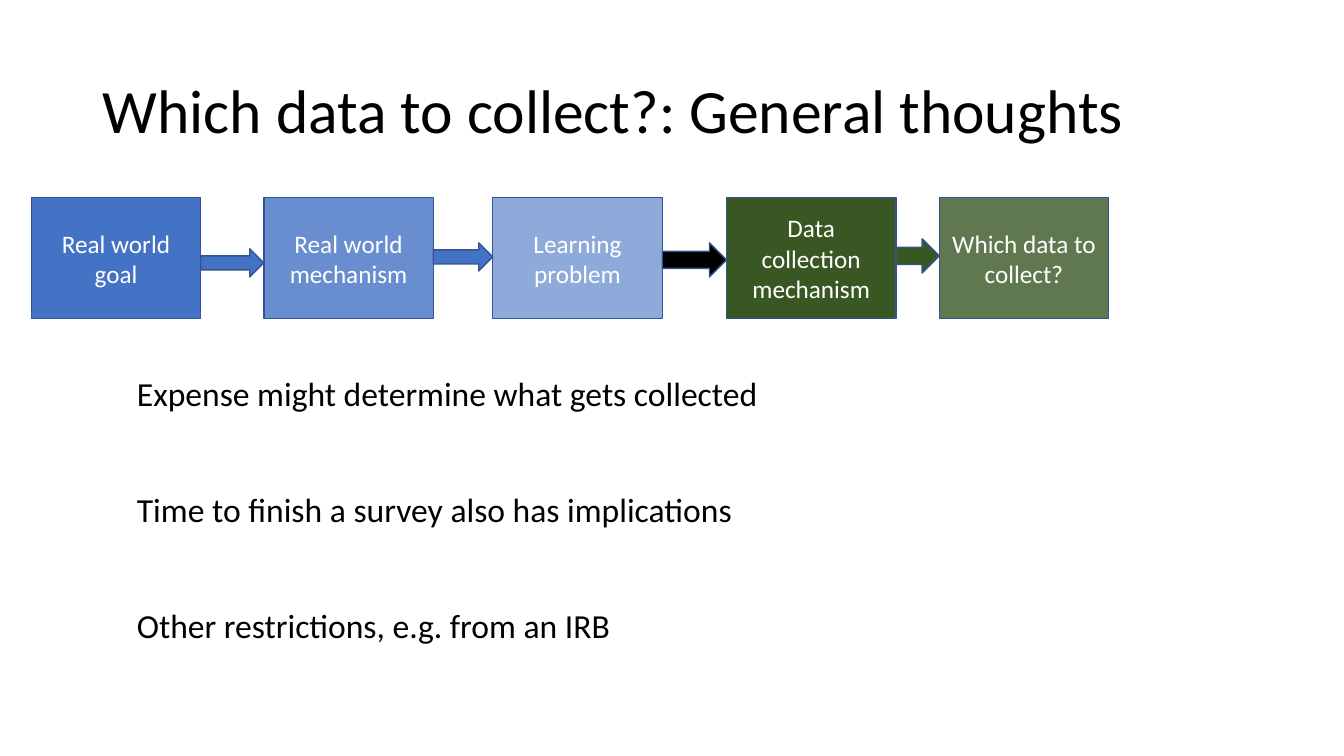
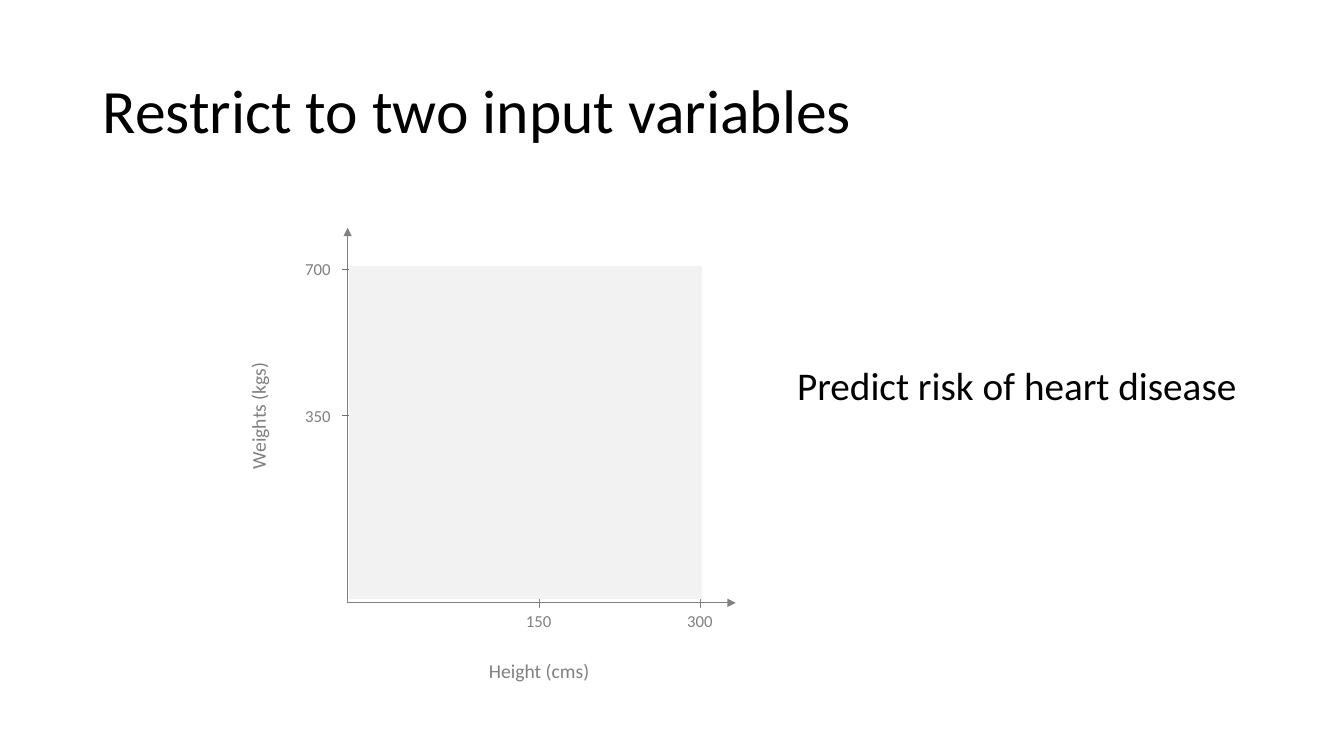
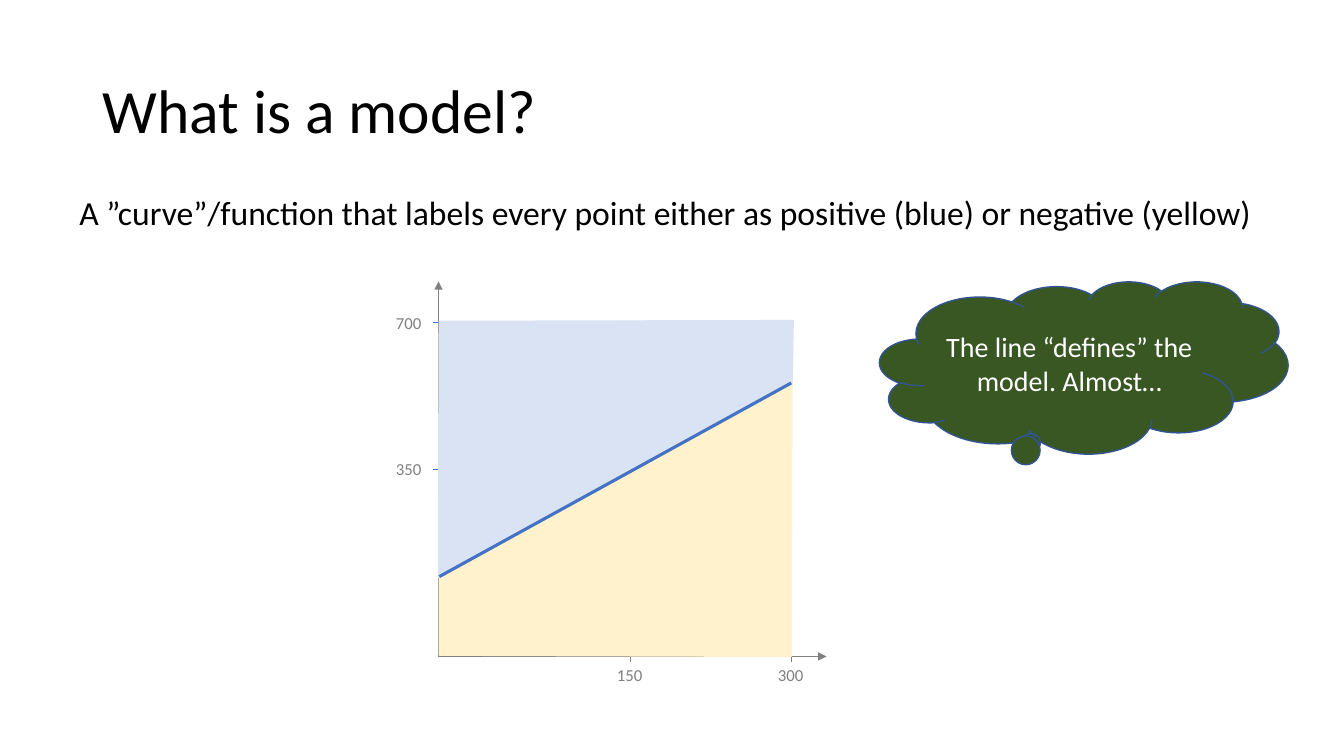
"""Build three slides about data collection and simple models."""
import pptx
import pptx.dml.color
import pptx.enum.dml
import pptx.enum.shapes
import pptx.enum.text
import pptx.oxml.ns
import pptx.util
from lxml import etree

Cm = pptx.util.Cm
Pt = pptx.util.Pt
RGB = pptx.dml.color.RGBColor
SHAPE = pptx.enum.shapes.MSO_SHAPE
ALIGN = pptx.enum.text.PP_ALIGN
ANCHOR = pptx.enum.text.MSO_ANCHOR
qn = pptx.oxml.ns.qn

FONT = "Calibri"
BLACK = RGB(0x00, 0x00, 0x00)
WHITE = RGB(0xFF, 0xFF, 0xFF)
GRAY = RGB(0x80, 0x80, 0x80)
PALE_GRAY = RGB(0xF2, 0xF2, 0xF2)
BLUE = RGB(0x44, 0x72, 0xC4)
OUTLINE = RGB(0x32, 0x54, 0x91)
GREEN = RGB(0x38, 0x57, 0x23)
PALE_BLUE = RGB(0xDA, 0xE3, 0xF3)
PALE_YELLOW = RGB(0xFF, 0xF2, 0xCC)

TITLES = [
    "Which data to collect?: General thoughts",
    "Restrict to two input variables",
    "What is a model?",
]

STEP_TOP, STEP_WIDTH, STEP_HEIGHT = 4.98, 4.27, 3.05
STEPS = [
    ("Real world goal", 0.79, BLUE, 100),
    ("Real world mechanism", 6.65, BLUE, 80),
    ("Learning problem", 12.42, BLUE, 60),
    ("Data collection mechanism", 18.31, GREEN, 100),
    ("Which data to collect?", 23.67, GREEN, 80),
]
STEP_ARROWS = [
    (6.27, 0.71, BLUE),
    (6.12, 0.71, BLUE),
    (6.12, 0.86, BLACK),
    (6.02, 0.86, GREEN),
]

THOUGHT_LEFT, THOUGHT_TOP, THOUGHT_PITCH = 3.2, 9.27, 2.92
THOUGHTS = [
    ("Expense might determine what gets collected", 16.31),
    ("Time to finish a survey also has implications", 15.65),
    ("Other restrictions, e.g. from an IRB", 12.55),
]

X_AXIS_LENGTH, Y_AXIS_LENGTH = 9.78, 9.45
HEIGHT_TICKS = [("300", 8.89), ("150", 4.83)]
WEIGHT_TICKS = [("700", 8.41), ("350", 4.72)]
TICK_HALF = 0.13
LABEL_WIDTH, LABEL_HEIGHT = 1.17, 0.76

INPUT_ORIGIN = (8.76, 15.19)
MODEL_ORIGIN = (11.05, 16.54)
LINE_START, LINE_END = (11.07, 14.53), (19.94, 9.65)
REGIONS = [
    (PALE_BLUE, [(19.96, 9.73), (19.99, 8.08), (11.07, 8.1), (11.05, 14.55)]),
    (PALE_YELLOW, [LINE_START, (11.07, 16.51), (19.94, 16.54), (19.96, 9.65)]),
]


def write(shape, text, size=18, color=BLACK, align=ALIGN.LEFT,
          anchor=ANCHOR.TOP, wrap=True, spacing=None):
    frame = shape.text_frame
    frame.word_wrap = wrap
    frame.vertical_anchor = anchor
    paragraph = frame.paragraphs[0]
    paragraph.alignment = align
    paragraph.line_spacing = spacing
    run = paragraph.add_run()
    run.text = text
    run.font.name = FONT
    run.font.size = Pt(size)
    run.font.color.rgb = color


def add_text(slide, box, text, rotation=0, **style):
    label = slide.shapes.add_textbox(*map(Cm, box))
    label.rotation = rotation
    write(label, text, **style)


def paint(shape, fill, line, opacity=100):
    shape.shadow.inherit = False
    shape.fill.solid()
    shape.fill.fore_color.rgb = fill
    shape.line.color.rgb = line
    shape.line.width = Pt(1)
    if opacity < 100:
        tint = shape.element.spPr.find(qn("a:solidFill")).find(qn("a:srgbClr"))
        etree.SubElement(tint, qn("a:alpha")).set("val", str(opacity * 1000))


def add_block(slide, kind, box, fill, line=OUTLINE, opacity=100):
    block = slide.shapes.add_shape(kind, *map(Cm, box))
    paint(block, fill, line, opacity)
    return block


def add_line(slide, start, end, color=GRAY, width=0.5, arrow=False):
    line = slide.shapes.add_connector(
        pptx.enum.shapes.MSO_CONNECTOR.STRAIGHT, *map(Cm, start + end))
    line.line.color.rgb = color
    line.line.width = Pt(width)
    if arrow:
        outline = line.element.spPr.find(qn("a:ln"))
        etree.SubElement(outline, qn("a:tailEnd")).set("type", "triangle")
    etree.SubElement(line.element.spPr, qn("a:effectLst"))


def add_axes(slide, origin):
    x, y = origin
    add_line(slide, origin, (x, y - Y_AXIS_LENGTH), arrow=True)
    add_line(slide, origin, (x + X_AXIS_LENGTH, y), arrow=True)
    marks = []
    for value, offset in HEIGHT_TICKS:
        tick = x + offset
        add_line(slide, (tick, y - TICK_HALF), (tick, y + TICK_HALF))
        marks.append((value, tick - LABEL_WIDTH / 2, y + 0.08))
    for value, offset in WEIGHT_TICKS:
        tick = y - offset
        add_line(slide, (x + TICK_HALF, tick), (x - TICK_HALF, tick), color=BLUE)
        marks.append((value, x - 1.32, tick - LABEL_HEIGHT / 2))
    for value, left, top in marks:
        add_text(slide, (left, top, LABEL_WIDTH, LABEL_HEIGHT), value,
                 size=12, color=GRAY, wrap=False)


def add_region(slide, color, corners):
    points = [(Cm(x), Cm(y)) for x, y in corners]
    builder = slide.shapes.build_freeform(*points[0])
    builder.add_line_segments(points[1:], close=True)
    paint(builder.convert_to_shape(), color, color)


def build_collection(slide):
    for text, left, color, opacity in STEPS:
        step = add_block(slide, SHAPE.RECTANGLE,
                         (left, STEP_TOP, STEP_WIDTH, STEP_HEIGHT),
                         color, opacity=opacity)
        write(step, text, color=WHITE, align=ALIGN.CENTER, anchor=ANCHOR.MIDDLE)
    for step, following, (top, height, color) in zip(STEPS, STEPS[1:], STEP_ARROWS):
        left = step[1] + STEP_WIDTH
        add_block(slide, SHAPE.RIGHT_ARROW,
                  (left, top, following[1] - left, height), color)
    for row, (text, width) in enumerate(THOUGHTS):
        top = THOUGHT_TOP + row * THOUGHT_PITCH
        add_text(slide, (THOUGHT_LEFT, top, width, 1.27), text, size=24, wrap=False)


def build_inputs(slide):
    add_axes(slide, INPUT_ORIGIN)
    add_text(slide, (12.07, 16.48, 3.07, 0.86), "Height (cms)",
             size=14, color=GRAY, wrap=False)
    add_text(slide, (4.9, 10.03, 3.23, 0.86), "Weights (kgs)", rotation=270,
             size=14, color=GRAY, wrap=False)
    add_block(slide, SHAPE.RECTANGLE, (8.81, 6.73, 8.86, 8.36),
              PALE_GRAY, line=PALE_GRAY)
    add_text(slide, (19.84, 8.99, 11.71, 1.45), "Predict risk of heart disease",
             size=28, wrap=False)


def build_model(slide):
    add_text(slide, (1.75, 4.7, 30.33, 1.27),
             "A ”curve”/function that labels every point either as "
             "positive (blue) or negative (yellow)", size=24, wrap=False)
    add_axes(slide, MODEL_ORIGIN)
    for color, corners in REGIONS:
        add_region(slide, color, corners)
    add_line(slide, LINE_START, LINE_END, color=BLUE, width=2.25)
    thought = add_block(slide, SHAPE.CLOUD_CALLOUT, (22.17, 7.09, 10.29, 4.34), GREEN)
    thought.adjustments[0] = -0.13
    thought.adjustments[1] = 0.44
    write(thought, "The line “defines” the model. Almost…", size=20,
          color=WHITE, align=ALIGN.CENTER, anchor=ANCHOR.MIDDLE)


def main():
    deck = pptx.Presentation()
    deck.slide_width, deck.slide_height = Cm(33.87), Cm(19.05)
    for title, build in zip(TITLES, (build_collection, build_inputs, build_model)):
        slide = deck.slides.add_slide(deck.slide_layouts[6])
        add_text(slide, (2.34, 1.02, 29.21, 3.68), title, size=44,
                 anchor=ANCHOR.MIDDLE, spacing=0.9)
        build(slide)
    deck.save("out.pptx")


if __name__ == "__main__":
    main()
